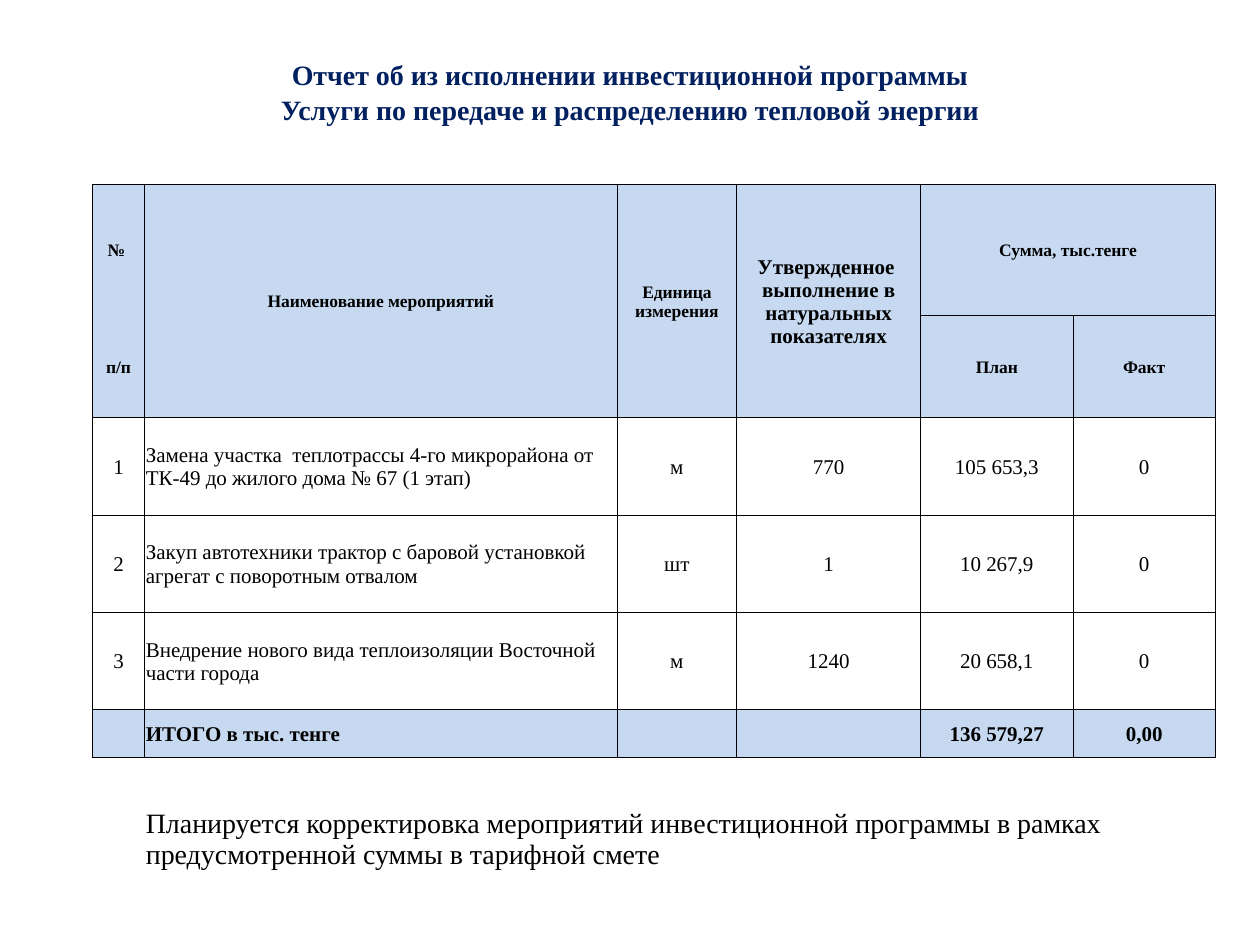
from lxml import etree
from pptx import Presentation
from pptx import util as u
from pptx.dml import color
from pptx.enum import text
from pptx.oxml import ns

FONT = "Times New Roman"
BLACK, NAVY, BLUE = "000000", "002060", "C6D9F1"
MID = text.PP_ALIGN.CENTER
LEFT = text.PP_ALIGN.LEFT

TITLE = ("Отчет об из исполнении инвестиционной программы\v"
         "Услуги по передаче и распределению тепловой энергии")
NOTE = ("Планируется корректировка мероприятий инвестиционной программы в рамках "
        "предусмотренной суммы в тарифной смете")
ROWS = [
    ["№ ", "Наименование мероприятий", "Единица измерения",
     "Утвержденное  выполнение в натуральных показателях", "Сумма, тыс.тенге", ""],
    ["п/п", "", "", "", "План", "Факт"],
    ["1", "Замена участка  теплотрассы 4-го микрорайона от ТК-49 до жилого дома № 67 (1 этап)",
     "м", "770", "105 653,3", "0"],
    ["2", "Закуп автотехники трактор с баровой установкой агрегат с поворотным отвалом",
     "шт", "1", "10 267,9", "0"],
    ["3", "Внедрение нового вида теплоизоляции Восточной части города",
     "м", "1240", "20 658,1", "0"],
    ["", "ИТОГО в тыс. тенге", "", "", "136 579,27", "0,00"],
    [""] * 6,
    ["", NOTE, "", "", "", ""],
    [""] * 6,
    [""] * 6,
]
WIDTHS = [1.04, 9.53, 2.41, 3.71, 3.07, 2.87]
HEIGHTS = [2.64, 1.91, 1.96, 1.96, 1.96, 0.97, 0.61, 0.84, 0.61, 0.61]
MERGES = [(0, 1, 1, 1), (0, 2, 1, 2), (0, 3, 1, 3), (0, 4, 0, 5), (7, 1, 9, 5)]
HEAD, TOTAL, NOTED = 2, 5, 7


def tint(code):
    return color.RGBColor.from_string(code)


class Page:
    def __init__(self, deck):
        self.slide = deck.slides.add_slide(deck.slide_layouts[6])

    def style(self, para, size, bold, shade, align):
        para.alignment = align
        for run in para.runs:
            run.font.name = FONT
            run.font.size = u.Pt(size)
            run.font.bold = bold
            run.font.color.rgb = tint(shade)
        if not para.runs:
            etree.SubElement(para._p, ns.qn("a:endParaRPr"), sz=str(size * 100))

    def title(self, words, left, top, width, height):
        frame = self.slide.shapes.add_textbox(
            u.Cm(left), u.Cm(top), u.Cm(width), u.Cm(height)).text_frame
        frame.word_wrap = True
        frame.vertical_anchor = text.MSO_ANCHOR.MIDDLE
        frame.text = words
        para = frame.paragraphs[0]
        para.line_spacing = 1.05
        self.style(para, 16, True, NAVY, MID)

    def border(self, cell, sides):
        props = cell._tc.get_or_add_tcPr()
        for side in "LRTB":
            line = etree.SubElement(props, ns.qn("a:ln" + side), w=str(u.Pt(0.5)))
            if side in sides:
                fill = etree.SubElement(line, ns.qn("a:solidFill"))
                etree.SubElement(fill, ns.qn("a:srgbClr"), val=BLACK)
            else:
                etree.SubElement(line, ns.qn("a:noFill"))

    def cell(self, cell, words, row, col):
        cell.margin_left = cell.margin_right = cell.margin_top = u.Cm(0.03)
        cell.margin_bottom = 0
        cell.vertical_anchor = text.MSO_ANCHOR.MIDDLE
        cell.text = words
        head = row < HEAD
        size = 16 if words == NOTE else 10 if head and (row, col) != (0, 3) else 12
        align = LEFT if col == 1 and not head else MID
        self.style(cell.text_frame.paragraphs[0], size, head or row == TOTAL, BLACK, align)
        sides = "LRTB" if row <= TOTAL else "T" if row < NOTED else ""
        if col == 0 and head:
            sides = sides.replace("TB"[1 - row], "")
        self.border(cell, sides)
        if head or row == TOTAL:
            cell.fill.solid()
            cell.fill.fore_color.rgb = tint(BLUE)
        else:
            cell.fill.background()

    def table(self, left, top):
        grid = self.slide.shapes.add_table(
            len(ROWS), len(WIDTHS), u.Cm(left), u.Cm(top),
            u.Cm(sum(WIDTHS)), u.Cm(sum(HEIGHTS))).table
        grid.first_row = grid.horz_banding = False
        for col, width in zip(grid.columns, WIDTHS):
            col.width = u.Cm(width)
        for row, height in zip(grid.rows, HEIGHTS):
            row.height = u.Cm(height)
        for row, line in enumerate(ROWS):
            for col, words in enumerate(line):
                self.cell(grid.cell(row, col), words, row, col)
        for top_row, first, low_row, last in MERGES:
            grid.cell(top_row, first).merge(grid.cell(low_row, last))


def main():
    deck = Presentation()
    deck.slide_width, deck.slide_height = u.Cm(25.4), u.Cm(19.05)
    page = Page(deck)
    page.title(TITLE, 1.27, 0.76, 22.86, 2.16)
    page.table(1.87, 3.72)
    deck.save("out.pptx")


if __name__ == "__main__":
    main()
